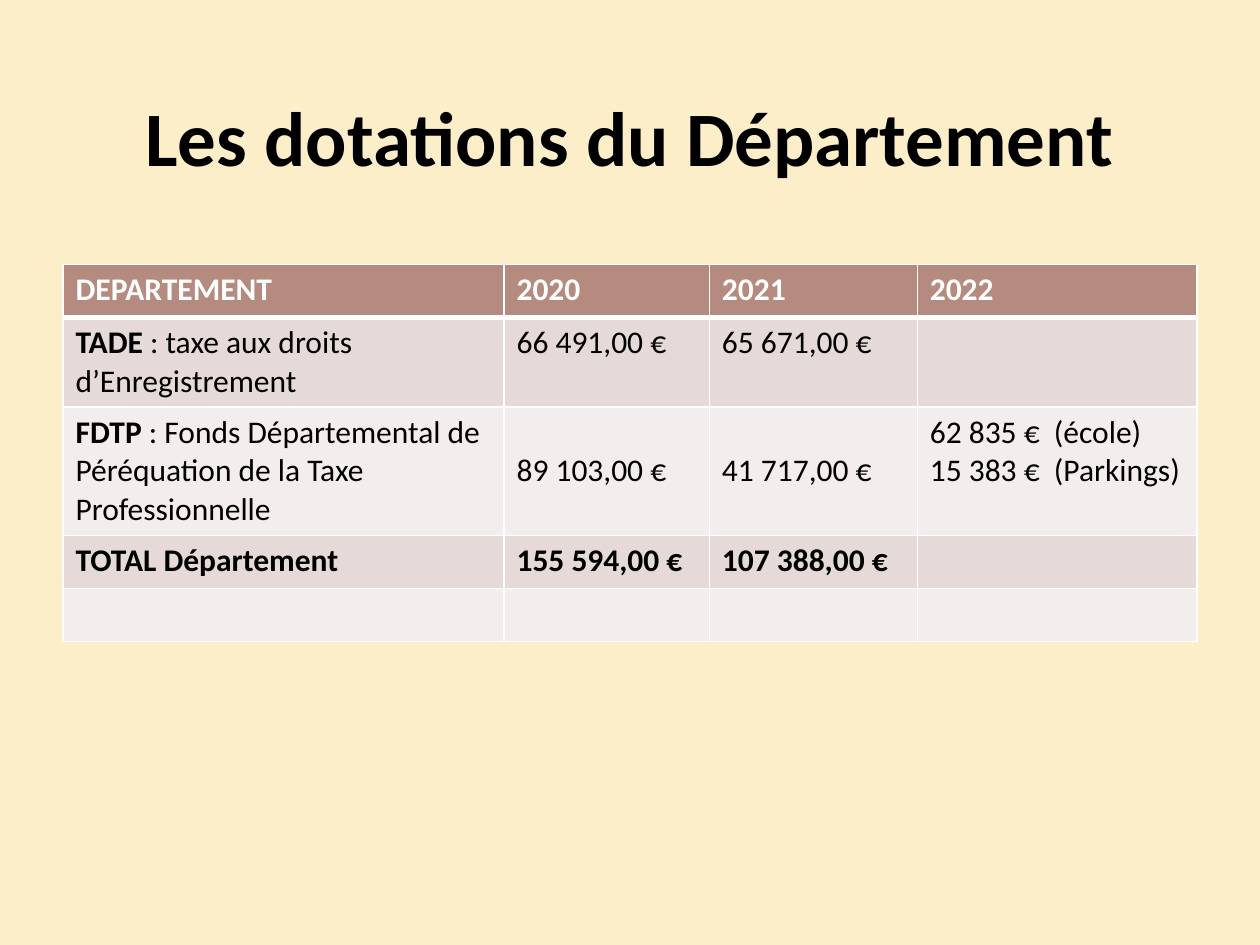
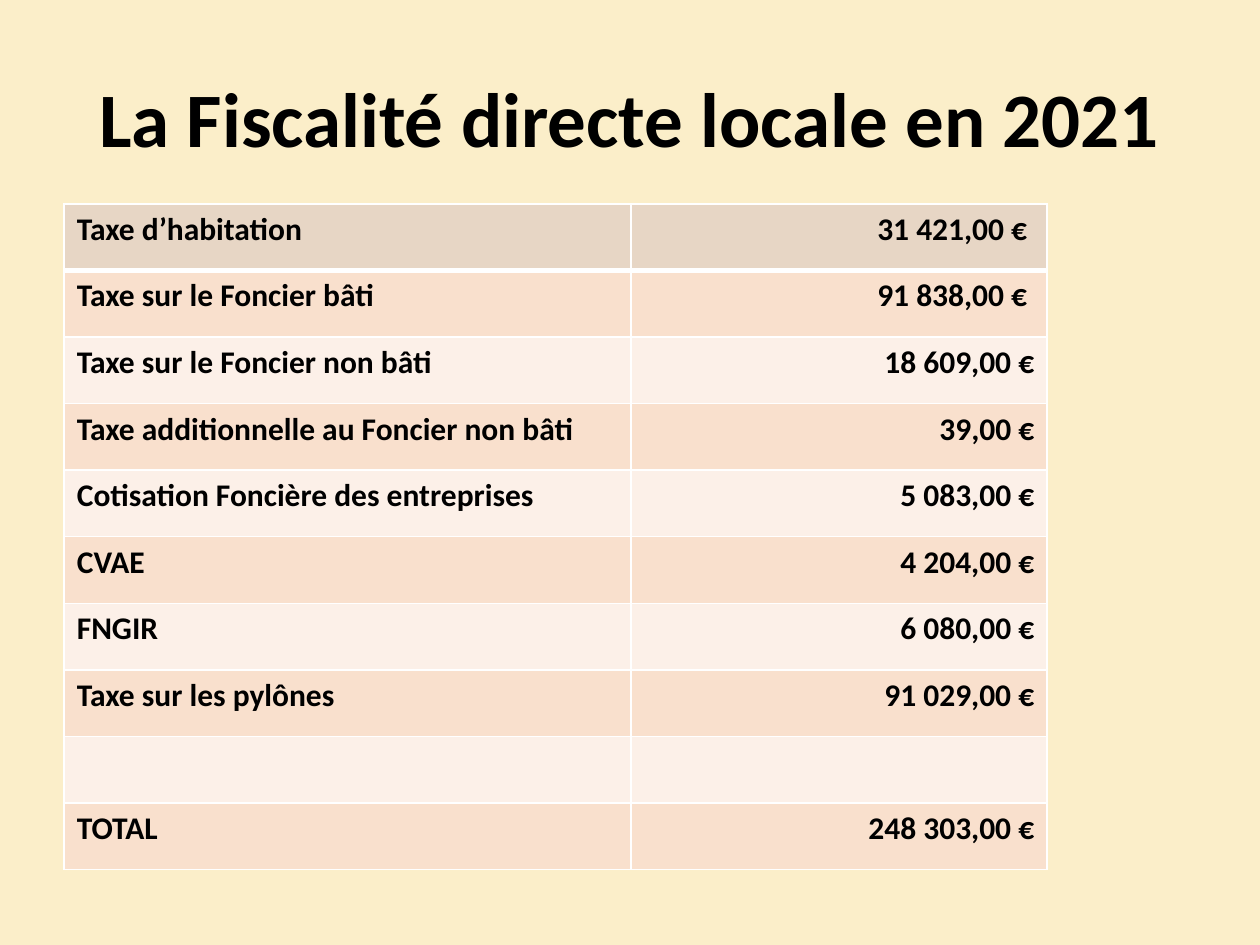
from lxml import etree
from pptx import Presentation
from pptx.dml.color import RGBColor
from pptx.enum import text as t
from pptx.oxml import ns
from pptx.util import Inches, Pt

FONT = "Calibri"
BACKGROUND, INK, WHITE = "FBEEC9", "000000", "FFFFFF"
# Row fills of each table: header, odd rows, even rows
ROSE = ("B58B80", "E5DAD8", "F3EEED")
PEACH = ("E7D6C5", "F9E0CD", "FCF0E8")
LINE_HEIGHT = 0.305  # one line of 18 pt table text


def rgb(value):
    return RGBColor.from_string(value)


def add_run(paragraph, words, size, bold, color=INK):
    run = paragraph.add_run()
    run.text = words
    run.font.name, run.font.size, run.font.bold = FONT, Pt(size), bold
    run.font.color.rgb = rgb(color)


def add_titled_slide(prs, heading, height):
    slide = prs.slides.add_slide(prs.slide_layouts[5])
    title = slide.shapes.title
    title.left, title.top = Inches(0.5), Inches(0.3)
    title.width, title.height = Inches(9), Inches(height)
    frame = title.text_frame
    frame.vertical_anchor = t.MSO_ANCHOR.MIDDLE
    paragraph = frame.paragraphs[0]
    paragraph.alignment = t.PP_ALIGN.CENTER
    add_run(paragraph, heading, 44, True)
    return slide


def set_borders(cell, row):
    """White grid, with a heavier rule under the header row."""
    properties = cell._tc.get_or_add_tcPr()
    widths = {"lnL": 1, "lnR": 1, "lnT": 3 if row == 1 else 1, "lnB": 3 if row == 0 else 1}
    for position, (side, width) in enumerate(widths.items()):
        line = etree.Element(ns.qn(f"a:{side}"), w=str(Pt(width)))
        fill = etree.SubElement(line, ns.qn("a:solidFill"))
        etree.SubElement(fill, ns.qn("a:srgbClr"), val=WHITE)
        properties.insert(position, line)


def write_cell(cell, content, bold, color, align):
    """Content is one string, or a bold term followed by its plain explanation."""
    term, explanation = content if isinstance(content, tuple) else (content, "")
    for index, words in enumerate(term.split("\n")):
        paragraph = cell.text_frame.paragraphs[0] if index == 0 else cell.text_frame.add_paragraph()
        paragraph.alignment = align
        if words:
            add_run(paragraph, words, 18, bold or bool(explanation), color)
        else:
            paragraph.font.size = Pt(18)
    if explanation:
        add_run(paragraph, explanation, 18, False, color)


def add_grid(slide, left, top, widths, heights, rows, fills, bold_rows,
             header_color=INK, value_align=t.PP_ALIGN.LEFT):
    table = slide.shapes.add_table(len(rows), len(widths), Inches(left), Inches(top),
                                   Inches(sum(widths)), Inches(sum(heights))).table
    for column, width in zip(table.columns, widths):
        column.width = Inches(width)
    for r, contents in enumerate(rows):
        table.rows[r].height = Inches(heights[r])
        for c, content in enumerate(contents):
            cell = table.cell(r, c)
            cell.fill.solid()
            cell.fill.fore_color.rgb = rgb(fills[0] if r == 0 else fills[2 - r % 2])
            set_borders(cell, r)
            write_cell(cell, content, r in bold_rows, header_color if r == 0 else INK,
                       value_align if c else t.PP_ALIGN.LEFT)
    return table


def add_department_grants(prs):
    slide = add_titled_slide(prs, "Les dotations du Département", 1.56)
    grants = [
        ("DEPARTEMENT", "2020", "2021", "2022"),
        (("TADE", " : taxe aux droits d’Enregistrement"), "66 491,00 €", "65 671,00 €", ""),
        (("FDTP", " : Fonds Départemental de Péréquation de la Taxe Professionnelle"),
         "89 103,00 €", "41 717,00 €", "62 835 €  (école)\n15 383 €  (Parkings)"),
        ("TOTAL Département", "155 594,00 €", "107 388,00 €", ""),
        ("", "", "", ""),
    ]
    table = add_grid(slide, 0.5, 2.1, [3.5, 1.63, 1.65, 2.22], [0.42, 0.71, 1.02, 0.42, 0.42],
                     grants, ROSE, bold_rows={0, 3}, header_color=WHITE)
    # The FDTP amounts sit on the second line of their row
    for year in (1, 2):
        table.cell(2, year).margin_top = Inches(0.05 + LINE_HEIGHT)


def add_local_taxes(prs):
    slide = add_titled_slide(prs, "La Fiscalité directe locale en 2021", 1.25)
    taxes = [
        ("Taxe d’habitation", "31 421,00 € "),
        ("Taxe sur le Foncier bâti", "91 838,00 € "),
        ("Taxe sur le Foncier non bâti", "18 609,00 €"),
        ("Taxe additionnelle au Foncier non bâti", "39,00 €"),
        ("Cotisation Foncière des entreprises", "5 083,00 €"),
        ("CVAE", "4 204,00 €"),
        ("FNGIR", "6 080,00 €"),
        ("Taxe sur les pylônes", "91 029,00 €"),
        ("", ""),
        ("TOTAL", "248 303,00 €"),
    ]
    add_grid(slide, 0.51, 1.62, [4.5, 3.3], [5.28 / len(taxes)] * len(taxes), taxes, PEACH,
             bold_rows=range(len(taxes)), value_align=t.PP_ALIGN.RIGHT)


def main():
    prs = Presentation()
    prs.slide_width, prs.slide_height = Inches(10), Inches(7.5)
    # Shared background
    backdrop = prs.slide_master.background.fill
    backdrop.solid()
    backdrop.fore_color.rgb = rgb(BACKGROUND)

    add_department_grants(prs)
    add_local_taxes(prs)
    prs.save("out.pptx")


if __name__ == "__main__":
    main()
